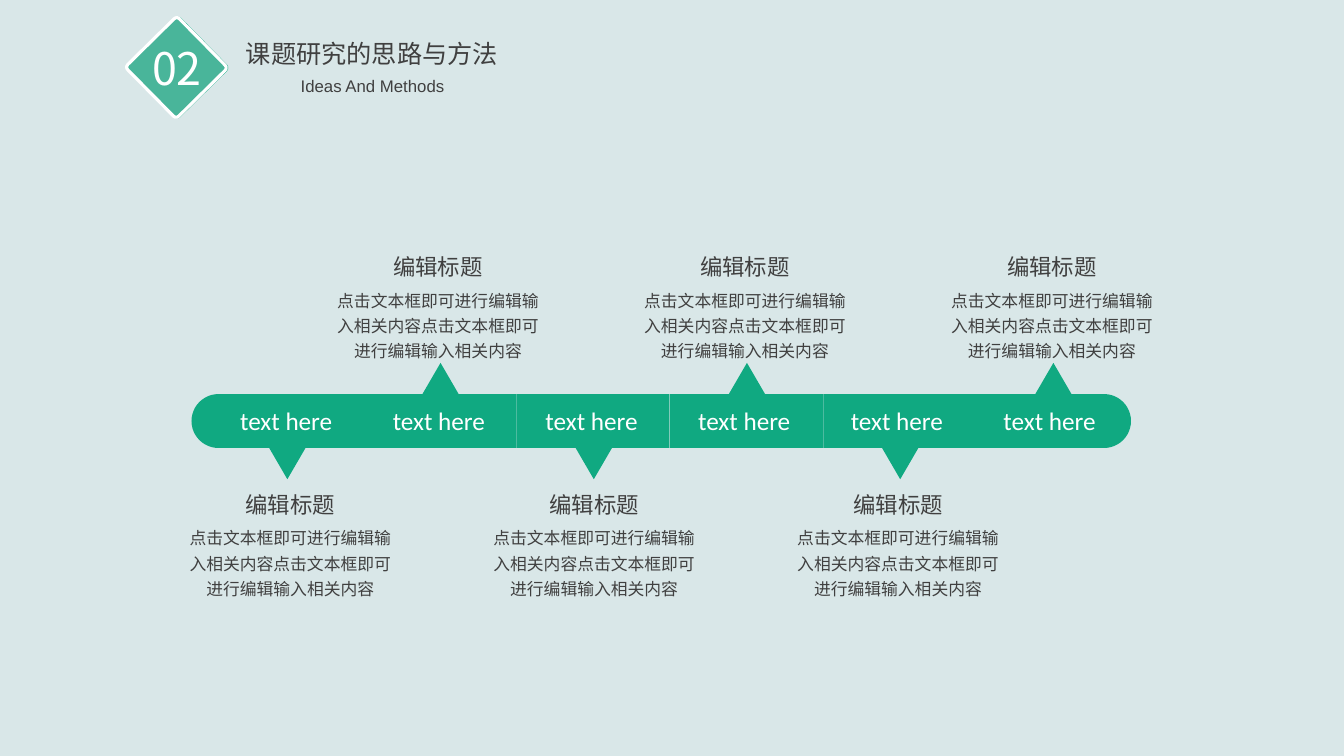
"""Build a six-step timeline slide with callouts alternating above and below a bar."""
from dataclasses import dataclass

from lxml import etree
from pptx import Presentation
from pptx.dml.color import RGBColor
from pptx.enum.shapes import MSO_SHAPE
from pptx.enum.text import MSO_ANCHOR, MSO_AUTO_SIZE, PP_ALIGN
from pptx.oxml.ns import qn
from pptx.util import Inches, Pt

RECTANGLE = MSO_SHAPE.RECTANGLE
ROUNDED = MSO_SHAPE.ROUNDED_RECTANGLE
TRIANGLE = MSO_SHAPE.ISOSCELES_TRIANGLE
CENTER = PP_ALIGN.CENTER
TOP, MIDDLE = MSO_ANCHOR.TOP, MSO_ANCHOR.MIDDLE
GROW = MSO_AUTO_SIZE.SHAPE_TO_FIT_TEXT

WIDTH, HEIGHT = Inches(13.33), Inches(7.5)
BACKGROUND, GREEN, MINT, WHITE, GREY = "D9E7E8", "10A981", "49B59A", "FFFFFF", "404040"
CJK = "Noto Sans CJK SC"

BAR_TOP, BAR_HEIGHT = 52.13, 7.13
POINTER_WIDTH, POINTER_HEIGHT = 2.7, 4.13
STEP_COUNT = 6
HEADING = "编辑标题"
BODY = "点击文本框即可进行编辑输入相关内容点击文本框即可进行编辑输入相关内容"


@dataclass(frozen=True)
class Box:
    """A frame in percent of the slide's width and height."""
    left: float
    top: float
    width: float
    height: float

    def emu(self) -> tuple[int, int, int, int]:
        return (int(WIDTH * self.left / 100), int(HEIGHT * self.top / 100),
                int(WIDTH * self.width / 100), int(HEIGHT * self.height / 100))


@dataclass(frozen=True)
class TextStyle:
    """The look of one kind of text."""
    size: float
    color: str = GREY
    font: str = CJK
    spacing: float = 1.0
    anchor: MSO_ANCHOR = TOP


@dataclass(frozen=True)
class CalloutRow:
    """A row of headed texts, spaced evenly by their centres."""
    first_center: float
    pitch: float
    top: float


NUMBER_STYLE = TextStyle(32, WHITE)
TITLE_STYLE = TextStyle(18)
SUBTITLE_STYLE = TextStyle(12, font="Arial", anchor=MIDDLE)
LABEL_STYLE = TextStyle(18, WHITE, "Calibri")
HEADING_STYLE = TextStyle(16)
BODY_STYLE = TextStyle(12, spacing=1.25)

CALLOUT_ROWS = (CalloutRow(21.6, 22.61, 64.27), CalloutRow(32.59, 22.84, 32.8))


def rgb(color: str) -> RGBColor:
    """Turn a hex string into a colour."""
    return RGBColor.from_string(color)


def centered(center: float, top: float, width: float, height: float) -> Box:
    """Give a box placed by its horizontal centre."""
    return Box(center - width / 2, top, width, height)


def add_block(slide, kind: MSO_SHAPE, box: Box, color: str = GREEN, rotation: float = 0,
              corner: float | None = None, outline: str | None = None) -> None:
    """Draw a flat filled shape."""
    block = slide.shapes.add_shape(kind, *box.emu())
    block.shadow.inherit = False
    block.fill.solid()
    block.fill.fore_color.rgb = rgb(color)
    block.rotation = rotation
    if corner is not None:
        block.adjustments[0] = corner
    if outline:
        block.line.color.rgb = rgb(outline)
        block.line.width = Pt(2.25)
    else:
        block.line.fill.background()


def add_text(slide, box: Box, wording: str, style: TextStyle) -> None:
    """Write one centred paragraph."""
    frame = slide.shapes.add_textbox(*box.emu()).text_frame
    frame.word_wrap = True
    frame.auto_size = GROW
    frame.vertical_anchor = style.anchor
    paragraph = frame.paragraphs[0]
    paragraph.text = wording
    paragraph.alignment = CENTER
    paragraph.line_spacing = style.spacing
    paragraph.font.size = Pt(style.size)
    paragraph.font.color.rgb = rgb(style.color)
    paragraph.font.name = style.font
    defaults = paragraph._p.pPr.find(qn("a:defRPr"))
    etree.SubElement(defaults, qn("a:ea")).set("typeface", style.font)


def draw_header(slide) -> None:
    """Draw the numbered diamond with the title and subtitle."""
    add_block(slide, ROUNDED, Box(10.43, 4, 5.55, 9.87), rotation=45.4, corner=0.06)
    add_block(slide, ROUNDED, Box(10.43, 4.13, 5.4, 9.6), MINT, 45.4, 0.05, WHITE)
    add_text(slide, Box(10.28, 4.67, 5.78, 8.53), "02", NUMBER_STYLE)
    add_text(slide, Box(7.35, 4.4, 40.65, 5.33), "课题研究的思路与方法", TITLE_STYLE)
    add_text(slide, Box(7.13, 9.33, 41.18, 4), "Ideas And Methods", SUBTITLE_STYLE)


def draw_bar(slide) -> None:
    """Draw the round-ended bar with its pointers and labels."""
    for left, width in ((14.25, 14.85), (70.65, 13.5)):
        add_block(slide, ROUNDED, Box(left, BAR_TOP, width, BAR_HEIGHT), corner=0.5)
    for segment in range(STEP_COUNT - 2):
        add_block(slide, RECTANGLE, Box(27 + 11.42 * segment, BAR_TOP, 11.4, BAR_HEIGHT))
    for step in range(STEP_COUNT):
        points_down = step % 2 == 0
        top = BAR_TOP + BAR_HEIGHT if points_down else BAR_TOP - POINTER_HEIGHT
        pointer = centered(21.38 + 11.4 * step, top, POINTER_WIDTH, POINTER_HEIGHT)
        add_block(slide, TRIANGLE, pointer, rotation=180 if points_down else 0)
        add_text(slide, centered(21.3 + 11.36 * step, 52.93, 8.7, 5.33), "text here", LABEL_STYLE)


def draw_callouts(slide, row: CalloutRow) -> None:
    """Write the headed texts of one row."""
    for place in range(STEP_COUNT // 2):
        center = row.first_center + row.pitch * place
        add_text(slide, centered(center, row.top + 4.27, 16.65, 14.8), BODY, BODY_STYLE)
        add_text(slide, centered(center, row.top, 11.93, 4.93), HEADING, HEADING_STYLE)


def main() -> None:
    """Build and save the slide."""
    deck = Presentation()
    deck.slide_width, deck.slide_height = WIDTH, HEIGHT
    slide = deck.slides.add_slide(deck.slide_layouts[6])
    slide.background.fill.solid()
    slide.background.fill.fore_color.rgb = rgb(BACKGROUND)
    draw_header(slide)
    draw_bar(slide)
    for row in CALLOUT_ROWS:
        draw_callouts(slide, row)
    deck.save("out.pptx")


if __name__ == "__main__":
    main()
